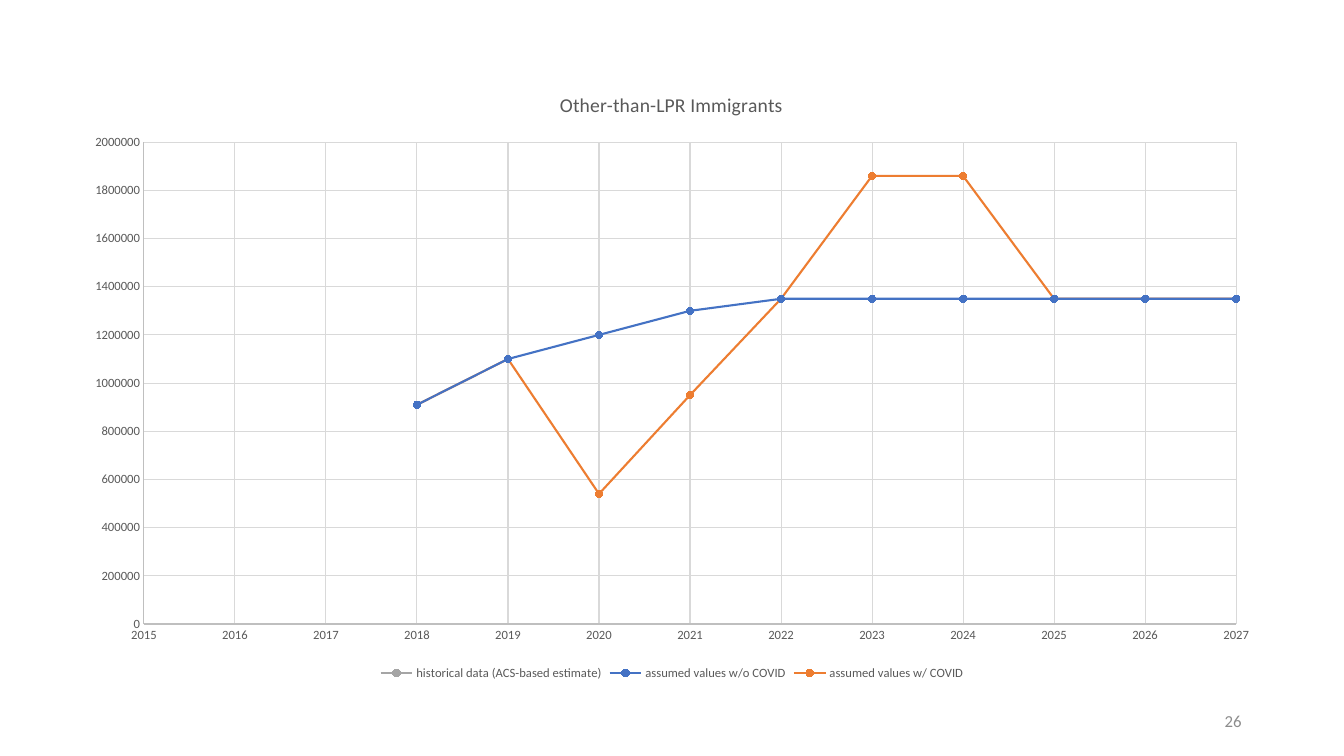
from dataclasses import dataclass

from lxml.etree import SubElement
from pptx import Presentation
from pptx.chart.data import XyChartData
from pptx.dml.color import RGBColor
from pptx.enum.chart import XL_CHART_TYPE as ChartType
from pptx.enum.chart import XL_LEGEND_POSITION as LegendPosition
from pptx.enum.chart import XL_MARKER_STYLE as MarkerStyle
from pptx.enum.chart import XL_TICK_MARK as TickMark
from pptx.enum.text import MSO_ANCHOR as Anchor
from pptx.enum.text import PP_ALIGN as Align
from pptx.oxml.ns import qn
from pptx.util import Pt


@dataclass(frozen=True)
class Theme:
    font: str = "Calibri"
    text: str = "595959"
    number: str = "8C8C8C"
    axis: str = "BFBFBF"
    grid: str = "D9D9D9"
    historical: str = "A5A5A5"
    without_covid: str = "4472C4"
    with_covid: str = "ED7D31"
    title_size: float = 14
    label_size: float = 9
    number_size: float = 12
    hairline: float = 0.75
    series_line: float = 1.5
    marker_size: int = 5


THEME = Theme()
PAGE_SIZE = (960, 540)
CHART_BOX = (50.4, 50.4, 859, 438.5)
NUMBER_BOX = (678, 500.4, 216, 28.8)
# places inside the chart
TITLE_PLACE = {"x": 347, "y": 12.3}
PLOT_PLACE = {"x": 52.4, "y": 51.2, "w": 780.2, "h": 344.2}

# name, yearly values from 2018, colour; None leaves the year blank
FIRST_YEAR = 2018
SERIES = [
    ("historical data (ACS-based estimate)", [None], THEME.historical),
    ("assumed values w/o COVID",
     [910000, 1100000, 1200000, 1300000] + [1350000] * 6,
     THEME.without_covid),
    ("assumed values w/ COVID",
     [910000, 1100000, 540000, 950000, 1350000, 1860000, 1860000]
     + [1350000] * 3, THEME.with_covid),
]


def style_font(font, size, color):
    for name, value in {"name": THEME.font, "size": Pt(size), "bold": False}.items():
        setattr(font, name, value)
    font.color.rgb = RGBColor.from_string(color)


def style_line(line, color, width):
    line.color.rgb = RGBColor.from_string(color)
    line.width = Pt(width)


def set_layout(parent, index, place, box):
    """Fix the place, in points, of a chart part inside the chart's box."""
    for old in parent.findall(qn("c:layout")):
        parent.remove(old)
    layout = SubElement(parent, qn("c:layout"))
    parent.insert(index, layout)
    manual = SubElement(layout, qn("c:manualLayout"))
    if "w" in place:
        SubElement(manual, qn("c:layoutTarget")).set("val", "inner")
    for mode in ("xMode", "yMode"):
        SubElement(manual, qn(f"c:{mode}")).set("val", "edge")
    _, _, width, height = box
    for name, length in place.items():
        whole = width if name in "xw" else height
        SubElement(manual, qn(f"c:{name}")).set("val", str(length / whole))


def clear_blank_points(chart_space):
    """Leave years without a value out of the chart's data."""
    for point in list(chart_space.iter(qn("c:pt"))):
        if point.findtext(qn("c:v")) in ("None", ""):
            point.getparent().remove(point)


def style_axis(axis, limits):
    settings = {
        "has_major_gridlines": True,
        "major_tick_mark": TickMark.NONE,
        "minor_tick_mark": TickMark.NONE,
        **limits,
    }
    for name, value in settings.items():
        setattr(axis, name, value)
    style_line(axis.format.line, THEME.axis, THEME.hairline)
    style_line(axis.major_gridlines.format.line, THEME.grid, THEME.hairline)
    style_font(axis.tick_labels.font, THEME.label_size, THEME.text)
    axis.tick_labels.number_format = "General"
    axis.tick_labels.number_format_is_linked = False


def style_series(series, color):
    series.smooth = False
    style_line(series.format.line, color, THEME.series_line)
    marker = series.marker
    marker.style = MarkerStyle.CIRCLE
    marker.size = THEME.marker_size
    marker.format.fill.solid()
    marker.format.fill.fore_color.rgb = RGBColor.from_string(color)
    style_line(marker.format.line, color, THEME.hairline)


def add_immigrant_chart(page, box):
    data = XyChartData()
    for name, values, _ in SERIES:
        entry = data.add_series(name)
        for year, value in enumerate(values, FIRST_YEAR):
            entry.add_data_point(year, value)
    chart = page.shapes.add_chart(
        ChartType.XY_SCATTER_LINES, *map(Pt, box), data).chart
    chart_space = chart.element if hasattr(chart, "element") else chart._chartSpace
    clear_blank_points(chart_space)
    style_font(chart.font, THEME.label_size, THEME.text)

    chart.has_title = True
    para = chart.chart_title.text_frame.paragraphs[0]
    span = para.add_run()
    span.text = "Other-than-LPR Immigrants"
    style_font(span.font, THEME.title_size, THEME.text)
    chart.chart_title.include_in_layout = False
    set_layout(chart_space.find(".//" + qn("c:title")), 1, TITLE_PLACE, box)
    set_layout(chart_space.find(".//" + qn("c:plotArea")), 0, PLOT_PLACE, box)

    chart.has_legend = True
    chart.legend.position = LegendPosition.BOTTOM
    chart.legend.include_in_layout = False
    style_font(chart.legend.font, THEME.label_size, THEME.text)

    style_axis(chart.category_axis,
               {"minimum_scale": 2015, "maximum_scale": 2027, "major_unit": 1})
    style_axis(chart.value_axis,
               {"minimum_scale": 0, "maximum_scale": 2000000, "major_unit": 200000})
    chart.plots[0].vary_by_categories = False
    for series, (_, _, color) in zip(chart.plots[0].series, SERIES):
        style_series(series, color)


def add_page_number(page, box, number):
    frame = page.shapes.add_textbox(*map(Pt, box)).text_frame
    frame.word_wrap = True
    frame.vertical_anchor = Anchor.MIDDLE
    para = frame.paragraphs[0]
    para.alignment = Align.RIGHT
    para.space_after = Pt(6)
    span = para.add_run()
    span.text = number
    style_font(span.font, THEME.number_size, THEME.number)


def main():
    deck = Presentation()
    deck.slide_width, deck.slide_height = map(Pt, PAGE_SIZE)
    page = deck.slides.add_slide(deck.slide_layouts[6])
    add_page_number(page, NUMBER_BOX, "26")
    add_immigrant_chart(page, CHART_BOX)
    deck.save("out.pptx")


if __name__ == "__main__":
    main()
